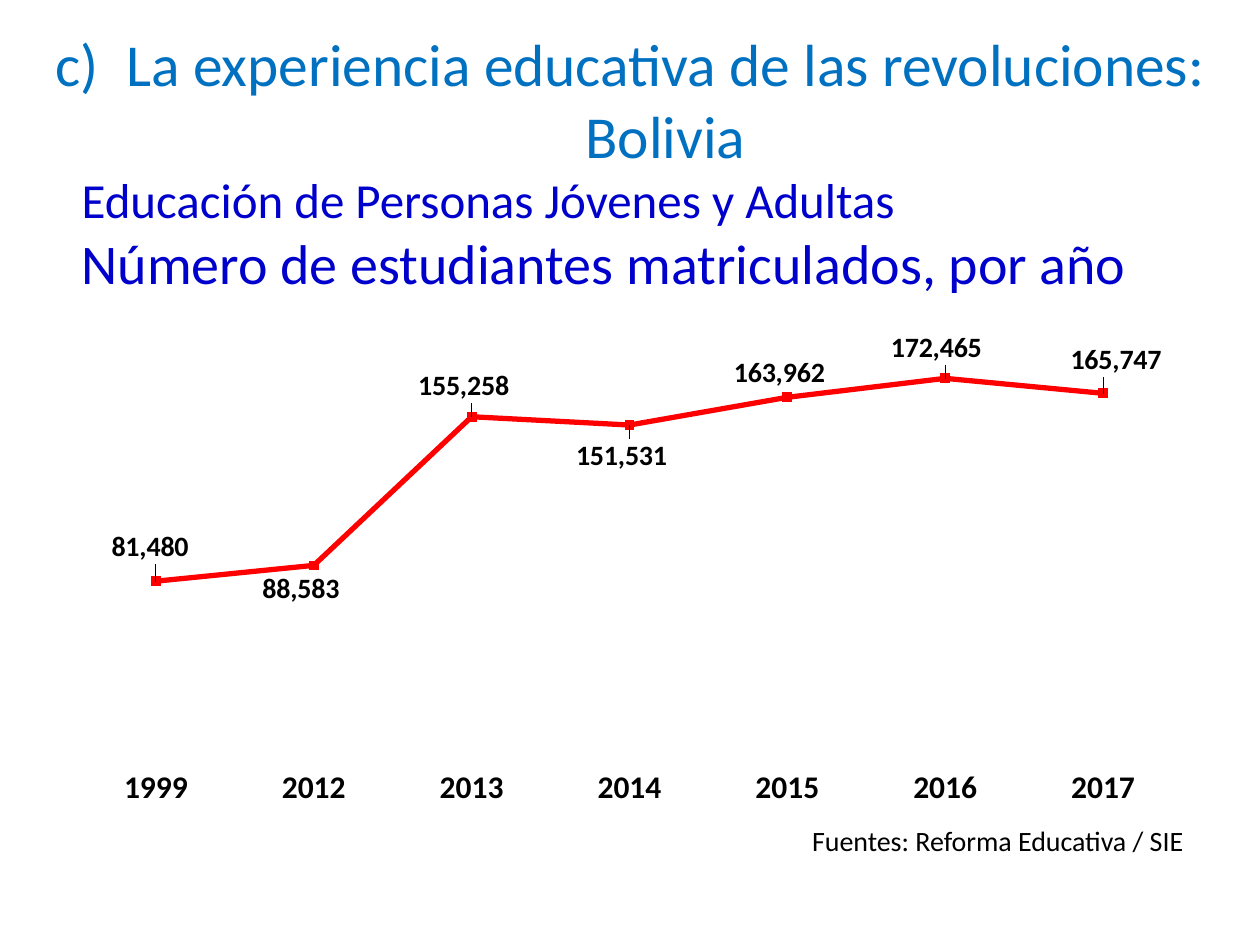
from lxml.etree import SubElement
from pptx import Presentation
from pptx.chart.data import CategoryChartData
from pptx.dml.color import RGBColor
from pptx.enum.chart import XL_CHART_TYPE as CT, XL_LABEL_POSITION as LP
from pptx.enum.chart import XL_MARKER_STYLE as MS, XL_TICK_MARK as TM
from pptx.enum.text import MSO_ANCHOR as VA, MSO_AUTO_SIZE as FIT, PP_ALIGN as AL
from pptx.oxml import parse_xml
from pptx.oxml.ns import nsdecls, qn
from pptx.util import Pt

EMU_PER_PX = 914400 / 126


def px(n):
    return round(n * EMU_PER_PX)


def color(value):
    return RGBColor.from_string(value)


def manual_layout(target=None, **values):
    inner = f'<c:layoutTarget val="{target}"/>' if target else ""
    if target:
        inner += '<c:xMode val="edge"/><c:yMode val="edge"/>'
    inner += "".join(f'<c:{k} val="{v:.4f}"/>' for k, v in values.items())
    return parse_xml(
        f'<c:layout {nsdecls("c")}><c:manualLayout>{inner}</c:manualLayout></c:layout>')


class Slide:
    font = "Calibri"
    black, blue, navy, red = "000000", "0070C0", "0000CC", "FF0000"

    def __init__(self, prs):
        self.s = prs.slides.add_slide(prs.slide_layouts[5])

    def style(self, font, size, col, bold=False):
        font.name, font.size, font.bold = self.font, Pt(size), bold
        font.color.rgb = color(col)

    def title(self, box, lines, sizes):
        sp = self.s.shapes.title
        sp.left, sp.top, sp.width, sp.height = map(px, box)
        tf = sp.text_frame
        tf.text = "\v".join(lines)
        tf.word_wrap, tf.auto_size, tf.vertical_anchor = True, FIT.NONE, VA.TOP
        p = tf.paragraphs[0]
        p.alignment = AL.LEFT
        for r, size in zip(p.runs, sizes):
            self.style(r.font, size, self.navy)

    def text(self, box, text, size, col, align, anchor=VA.TOP, start=None):
        tf = self.s.shapes.add_textbox(*map(px, box)).text_frame
        tf.text = text
        tf.word_wrap, tf.vertical_anchor = True, anchor
        p = tf.paragraphs[0]
        p.alignment = align
        if start:
            pPr = p._p.get_or_add_pPr()
            pPr.set("marL", str(px(71)))
            pPr.set("indent", str(px(-71)))
            SubElement(pPr, qn("a:buFont"), typeface="+mj-lt")
            SubElement(pPr, qn("a:buAutoNum"), type="alphaLcParenR", startAt=str(start))
        self.style(p.runs[0].font, size, col)

    def line_chart(self, box, points, plot):
        data = CategoryChartData(number_format="#,##0")
        data.categories = [year for year, *_ in points]
        data.add_series("Series 1", [value for _, value, *_ in points])
        chart = self.s.shapes.add_chart(CT.LINE_MARKERS, *map(px, box), data).chart
        chart.has_legend = chart.has_title = False
        self.style(chart.font, 10, self.black)
        self.axes(chart)
        left, top, width, height = box
        area = chart._chartSpace.chart.plotArea
        for old in area.findall(qn("c:layout")):
            area.remove(old)
        area.insert(0, manual_layout(
            "inner", x=(plot[0] - left) / width, y=(plot[1] - top) / height,
            w=plot[2] / width, h=plot[3] / height))
        chart.plots[0].vary_by_categories = False
        series = chart.plots[0].series[0]
        series.smooth = False
        series.format.line.color.rgb = color(self.red)
        series.format.line.width = Pt(3)
        series.marker.style, series.marker.size = MS.SQUARE, 5
        series.marker.format.fill.solid()
        series.marker.format.fill.fore_color.rgb = color(self.red)
        series.marker.format.line.color.rgb = color(self.red)
        labels = series.data_labels
        labels.show_value, labels.position = True, LP.CENTER
        labels.number_format, labels.number_format_is_linked = "#,##0", False
        self.style(labels.font, 16, self.black, True)
        for i, (_, _, dx, dy) in enumerate(points):
            label = series.points[i].data_label
            self.style(label.font, 16, self.black, True)
            label.position = LP.CENTER
        for dLbl, (_, _, dx, dy) in zip(labels._element.findall(qn("c:dLbl")), points):
            dLbl.insert(1, manual_layout(x=dx / width, y=dy / height))

    def axes(self, chart):
        cat, val = chart.category_axis, chart.value_axis
        cat.major_tick_mark = cat.minor_tick_mark = TM.NONE
        cat.format.line.fill.background()
        self.style(cat.tick_labels.font, 18, self.black, True)
        val.minimum_scale, val.maximum_scale = 0, 200000
        val.has_major_gridlines = val.visible = False


def main():
    prs = Presentation()
    prs.slide_width, prs.slide_height = px(1260), px(945)
    slide = Slide(prs)
    slide.title((69, 163, 1147, 82),
                ["Educación de Personas Jóvenes y Adultas",
                 "Número de estudiantes matriculados, por año"], [28, 32])
    slide.text((0, 21, 1260, 144),
               "La experiencia educativa de las revoluciones: Bolivia",
               34, slide.blue, AL.CENTER, start=3)
    slide.text((684, 819, 512, 42), "Fuentes: Reforma Educativa / SIE",
               16, slide.black, AL.RIGHT, VA.MIDDLE)
    points = [("1999", 81480, -6, -34), ("2012", 88583, -13, 24),
              ("2013", 155258, -8, -30), ("2014", 151531, -8, 31),
              ("2015", 163962, -8, -24), ("2016", 172465, -9, -30),
              ("2017", 165747, 13, -33)]
    slide.line_chart((54, 306, 1150, 512), points, (77, 317, 1105, 446))
    prs.save("out.pptx")


if __name__ == "__main__":
    main()
